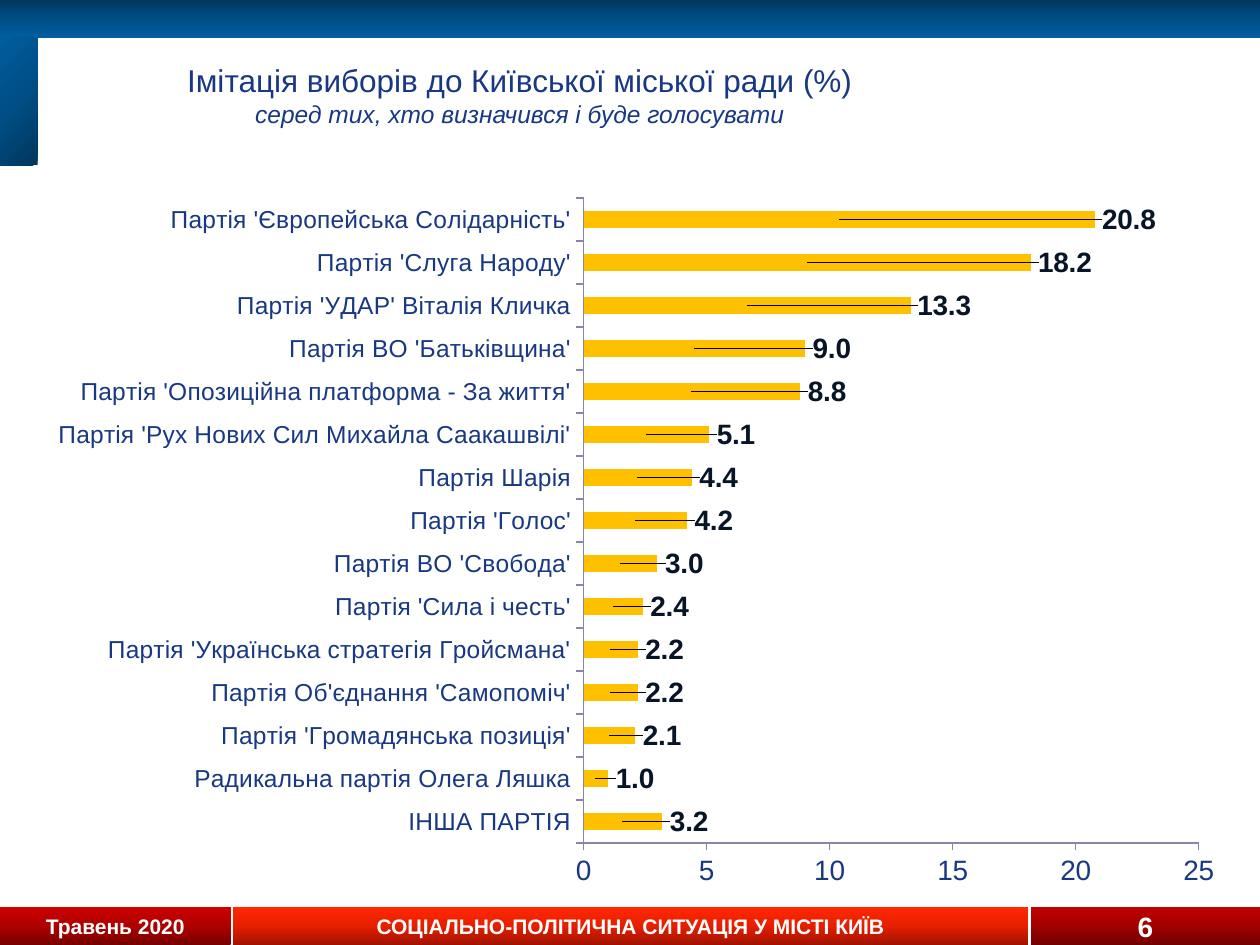
from copy import deepcopy

from pptx import Presentation
from pptx.chart.data import CategoryChartData
from pptx.dml.color import RGBColor
from pptx.enum.chart import XL_CHART_TYPE, XL_LABEL_POSITION, XL_TICK_MARK
from pptx.enum.shapes import MSO_SHAPE
from pptx.enum.text import MSO_ANCHOR, MSO_AUTO_SIZE, PP_ALIGN
from pptx.oxml import parse_xml
from pptx.oxml.ns import nsdecls
from pptx.util import Cm, Pt

# Colours
NAVY = RGBColor(0x18, 0x38, 0x83)
INK = RGBColor(0x07, 0x15, 0x27)
WHITE = RGBColor(0xFF, 0xFF, 0xFF)
GOLD = RGBColor(0xFF, 0xC0, 0x00)
AXIS_GREY = RGBColor(0x86, 0x86, 0xA8)
BLUES = [RGBColor(0x00, 0x37, 0x5E), RGBColor(0x00, 0x4E, 0x85), RGBColor(0x00, 0x5D, 0x9E)]
DATE_REDS = [RGBColor(0x77, 0x00, 0x00), RGBColor(0xAD, 0x00, 0x00), RGBColor(0xCE, 0x00, 0x00)]
TOPIC_REDS = [RGBColor(0xA0, 0x12, 0x00), RGBColor(0xE6, 0x1F, 0x00), RGBColor(0xFF, 0x28, 0x00)]
PAGE_REDS = [RGBColor(0x72, 0x00, 0x00), RGBColor(0xA2, 0x00, 0x00), RGBColor(0xC0, 0x00, 0x00)]

# Content
HEADING = "Імітація виборів до Київської міської ради (%)"
SUBHEADING = "серед тих, хто визначився і буде голосувати"
RATINGS = [
    ("ІНША ПАРТІЯ", 3.2),
    ("Радикальна партiя Олега Ляшка", 1.0),
    ("Партія 'Громадянська позицiя'", 2.1),
    ("Партія Об'єднання 'Самопомiч'", 2.2),
    ("Партія 'Українська стратегія Гройсмана'", 2.2),
    ("Партія 'Сила і честь'", 2.4),
    ("Партія ВО 'Свобода'", 3.0),
    ("Партія 'Голос'", 4.2),
    ("Партія Шарія", 4.4),
    ("Партія 'Рух Нових Сил Михайла Саакашвілі'", 5.1),
    ("Партія 'Опозицiйна платформа - За життя'", 8.8),
    ("Партія ВО 'Батькiвщина'", 9.0),
    ("Партія 'УДАР' Віталія Кличка", 13.3),
    ("Партiя 'Слуга Народу'", 18.2),
    ("Партія 'Європейська Солiдарнiсть'", 20.8),
]
# left, top, width, height (cm), gradient, angle, text, size
BANDS = [
    (0, 18.29, 4.65, 0.76, DATE_REDS, 90, "Травень 2020", 12),
    (4.7, 18.29, 16.03, 0.76, TOPIC_REDS, 90, "СОЦІАЛЬНО-ПОЛІТИЧНА СИТУАЦІЯ У МІСТІ КИЇВ", 12),
    (20.78, 18.29, 4.62, 0.76, PAGE_REDS, 90, "6", 16),
    (0, 0, 25.4, 0.76, BLUES, 270, "", 12),
    (0, 0.74, 0.76, 2.59, BLUES, 135, "", 12),
]
AXIS_MAX = 25
PLOT = {"x": 0.456, "y": 0.032, "w": 0.514, "h": 0.898}
LABEL_FORMAT = "###0.0"


def set_format(target, **values):
    for name, value in values.items():
        setattr(target, name, value)


def set_font(font, size, color, **extra):
    set_format(font, name="Arial", size=Pt(size), **extra)
    font.color.rgb = color


def manual_layout(lead, offsets):
    parts = "".join(f'<c:{key} val="{value}"/>' for key, value in offsets.items())
    return parse_xml(f"<c:layout {nsdecls('c')}><c:manualLayout>{lead}{parts}"
                     "</c:manualLayout></c:layout>")


def add_band(slide, left, top, width, height, colors, angle, text, size):
    band = slide.shapes.add_shape(MSO_SHAPE.RECTANGLE, Cm(left), Cm(top), Cm(width), Cm(height))
    band.shadow.inherit = False
    band.line.fill.background()
    band.fill.gradient()
    band.fill.gradient_angle = angle
    first_stop = band.element.xpath(".//a:gs")[0]
    first_stop.addnext(deepcopy(first_stop))
    for stop, color, position in zip(band.fill.gradient_stops, colors, (0, 0.5, 1)):
        stop.color.rgb = color
        stop.position = position
    if text:
        frame = band.text_frame
        set_format(frame, vertical_anchor=MSO_ANCHOR.MIDDLE, word_wrap=True,
                   margin_top=0, margin_bottom=0)
        paragraph = frame.paragraphs[0]
        paragraph.alignment = PP_ALIGN.CENTER
        run = paragraph.add_run()
        run.text = text
        set_font(run.font, size, WHITE, bold=True)


def add_title(slide):
    title = slide.shapes.title
    set_format(title, left=Cm(0.76), top=Cm(0.76), width=Cm(19.13), height=Cm(2.74))
    frame = title.text_frame
    set_format(frame, word_wrap=True, auto_size=MSO_AUTO_SIZE.NONE,
               vertical_anchor=MSO_ANCHOR.MIDDLE, margin_left=Cm(0.56),
               margin_right=Cm(0.25), margin_top=Cm(0.13), margin_bottom=Cm(0.57))
    paragraph = frame.paragraphs[0]
    paragraph.alignment = PP_ALIGN.CENTER
    heading = paragraph.add_run()
    heading.text = HEADING
    set_font(heading.font, 18, NAVY)
    paragraph.add_line_break()
    subheading = paragraph.add_run()
    subheading.text = SUBHEADING
    set_font(subheading.font, 14, NAVY, italic=True)


def add_ratings(slide):
    ratings = CategoryChartData(number_format=LABEL_FORMAT)
    ratings.categories = [party for party, _ in RATINGS]
    ratings.add_series("Series 1", [share for _, share in RATINGS])
    chart = slide.shapes.add_chart(XL_CHART_TYPE.BAR_STACKED, Cm(0.76), Cm(3.53),
                                   Cm(24.13), Cm(14.48), ratings).chart
    set_format(chart, has_legend=False, has_title=False)
    set_font(chart.font, 18, NAVY)

    # Axes
    for axis, size in ((chart.category_axis, 14), (chart.value_axis, 16)):
        set_format(axis, has_major_gridlines=False, major_tick_mark=XL_TICK_MARK.OUTSIDE,
                   minor_tick_mark=XL_TICK_MARK.NONE)
        set_font(axis.tick_labels.font, size, NAVY)
        axis.format.line.color.rgb = AXIS_GREY
        axis.format.line.width = Pt(0.75)
    set_format(chart.value_axis, minimum_scale=0, maximum_scale=AXIS_MAX, major_unit=5)
    set_format(chart.value_axis.tick_labels, number_format="0", number_format_is_linked=False)

    # Bars
    plot = chart.plots[0]
    set_format(plot, gap_width=150, overlap=100, vary_by_categories=False)
    bars = plot.series[0]
    bars.format.fill.solid()
    bars.format.fill.fore_color.rgb = GOLD
    set_format(bars.data_labels, show_value=True, number_format=LABEL_FORMAT,
               number_format_is_linked=False)
    set_font(bars.data_labels.font, 16, INK, bold=True)

    # Labels move from the bar centre to just past its end
    for index in range(len(RATINGS)):
        label = bars.points[index].data_label
        label.position = XL_LABEL_POSITION.CENTER
        set_font(label.font, 16, INK, bold=True)
    for label, (_, share) in zip(chart.element.xpath(".//c:dLbl"), RATINGS):
        half_bar = share / AXIS_MAX * PLOT["w"] / 2
        shift = half_bar + 0.006 + 0.0055 * len(f"{share:.1f}")
        number_format = parse_xml(f'<c:numFmt {nsdecls("c")} formatCode="{LABEL_FORMAT}" '
                                  'sourceLinked="0"/>')
        label[0].addnext(number_format)
        label[0].addnext(manual_layout("", {"x": round(shift, 4), "y": 0}))

    # Inner plot area
    plot_area = chart.element.xpath(".//c:plotArea")[0]
    for layout in plot_area.xpath("./c:layout"):
        plot_area.remove(layout)
    lead = ('<c:layoutTarget val="inner"/><c:xMode val="edge"/><c:yMode val="edge"/>')
    plot_area.insert(0, manual_layout(lead, PLOT))


def main():
    deck = Presentation()
    set_format(deck, slide_width=Cm(25.4), slide_height=Cm(19.05))
    slide = deck.slides.add_slide(deck.slide_layouts[5])
    for band in BANDS:
        add_band(slide, *band)
    add_title(slide)
    add_ratings(slide)
    deck.save("out.pptx")


if __name__ == "__main__":
    main()
